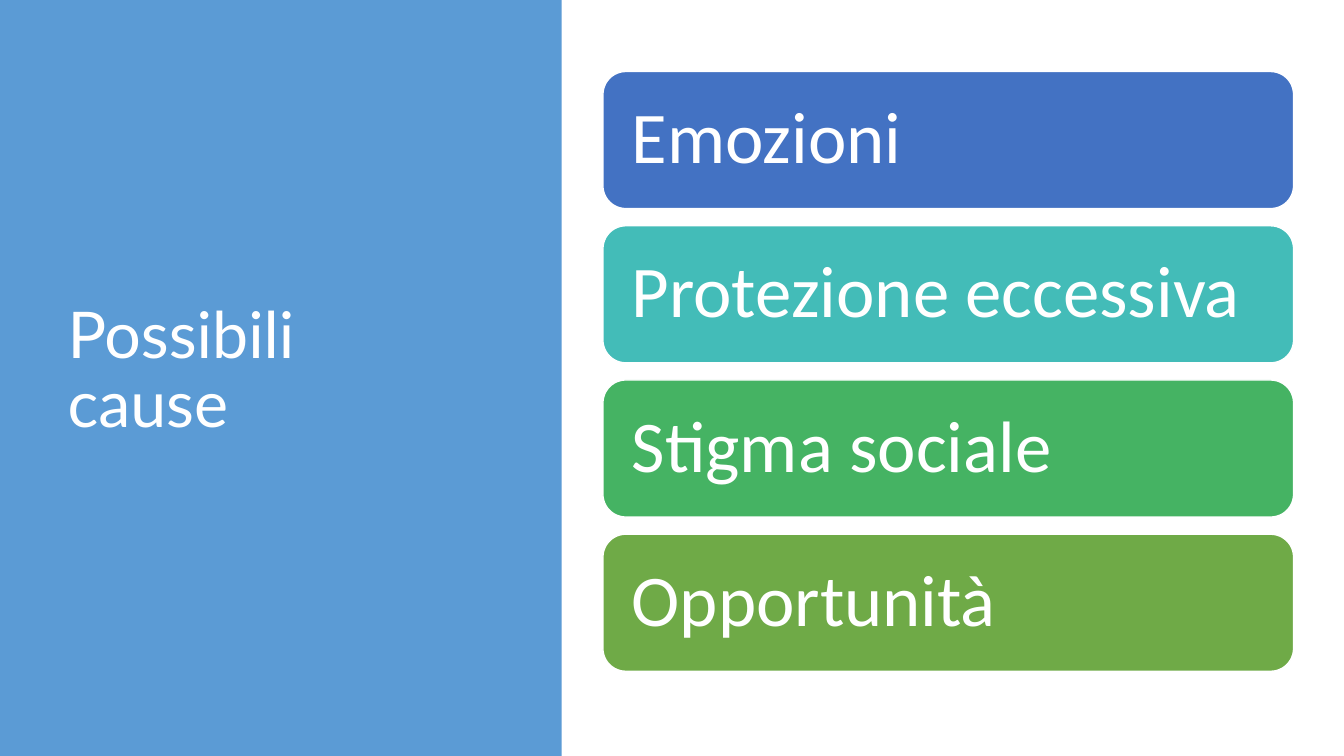
from pptx import Presentation
from pptx.dml.color import RGBColor
from pptx.enum.shapes import MSO_SHAPE as Preset
from pptx.enum.text import MSO_ANCHOR as Anchor, MSO_AUTO_SIZE as AutoSize, PP_ALIGN as Align
from pptx.util import Inches, Pt

COLORS = {
    "panel": "5B9BD5",
    "white": "FFFFFF",
    "blue": "4372C3",
    "teal": "43BCB8",
    "green": "45B363",
    "olive": "6FAA47",
}
CAUSES = [
    ("Emozioni", "blue"),
    ("Protezione eccessiva", "teal"),
    ("Stigma sociale", "green"),
    ("Opportunità", "olive"),
]
CARD_TOP, CARD_STEP = 0.71, 1.53


def add_block(slide, preset, left, top, width, height, color):
    shape = slide.shapes.add_shape(
        preset, Inches(left), Inches(top), Inches(width), Inches(height))
    shape.shadow.inherit = False
    shape.fill.solid()
    shape.fill.fore_color.rgb = RGBColor.from_string(COLORS[color])
    return shape


def write_text(shape, text, font_name, size, margin_x, margin_y):
    frame = shape.text_frame
    frame.text = text
    frame_format = {
        "word_wrap": True,
        "auto_size": AutoSize.NONE,
        "vertical_anchor": Anchor.MIDDLE,
        "margin_left": Inches(margin_x),
        "margin_right": Inches(margin_x),
        "margin_top": Inches(margin_y),
        "margin_bottom": Inches(margin_y),
    }
    for name, value in frame_format.items():
        setattr(frame, name, value)
    paragraph = frame.paragraphs[0]
    paragraph.alignment = Align.LEFT
    paragraph.line_spacing = 0.9
    font = paragraph.runs[0].font
    for run in paragraph.runs:
        font = run.font
        font.name = font_name
        font.size = Pt(size)
        font.color.rgb = RGBColor.from_string(COLORS["white"])


presentation = Presentation()
presentation.slide_width = Inches(13.33)
presentation.slide_height = Inches(7.5)
slide = presentation.slides.add_slide(presentation.slide_layouts[5])

title = slide.shapes.title
title_place = {"left": 0.57, "top": 0.68, "width": 4.16, "height": 6.02}
for name, value in title_place.items():
    setattr(title, name, Inches(value))
write_text(title, "Possibili\vcause", "Lato", 46, 0.1, 0.05)

panel = add_block(slide, Preset.RECTANGLE, 0, 0, 5.57, 7.5, "panel")
panel.line.fill.background()
title.element.addprevious(panel.element)

for index, (cause, color) in enumerate(CAUSES):
    top = CARD_TOP + index * CARD_STEP
    card = add_block(slide, Preset.ROUNDED_RECTANGLE, 5.98, top, 6.85, 1.36, color)
    card.adjustments[0] = 0.167
    card.line.color.rgb = RGBColor.from_string(COLORS["white"])
    card.line.width = Pt(1)
    write_text(card, cause, "Calibri", 52, 0.22, 0.22)

presentation.save("out.pptx")
